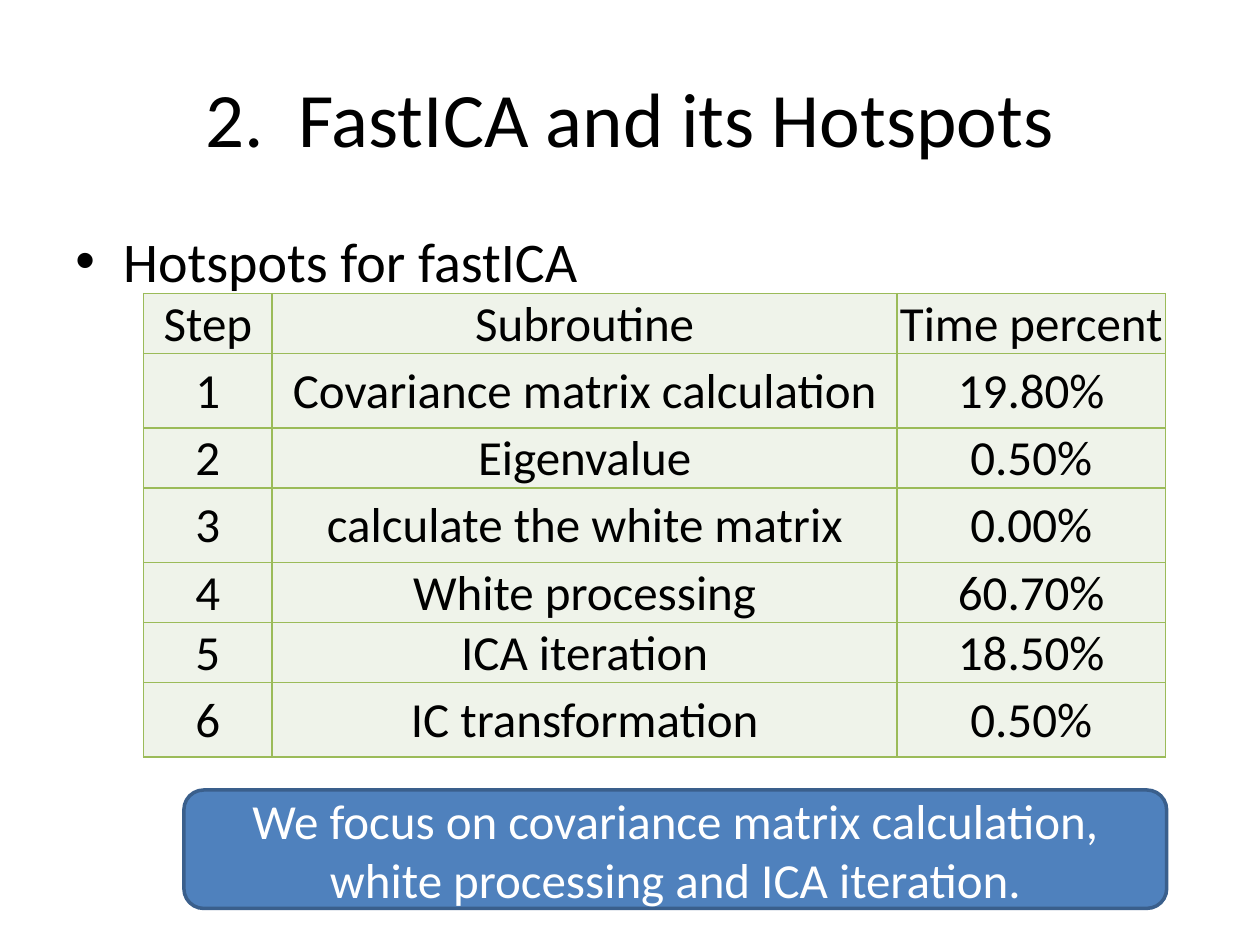
from lxml import etree
from pptx import Presentation
from pptx import util as u
from pptx.dml.color import RGBColor
from pptx.enum import shapes, text
from pptx.oxml.ns import qn

# Content
TITLE = "2.  FastICA and its Hotspots"
BULLET = "Hotspots for fastICA"
ROWS = [
    ("Step", "Subroutine", "Time percent"),
    ("1", "Covariance matrix calculation", "19.80%"),
    ("2", "Eigenvalue", "0.50%"),
    ("3", "calculate the white matrix", "0.00%"),
    ("4", "White processing", "60.70%"),
    ("5", "ICA iteration", "18.50%"),
    ("6", "IC transformation", "0.50%"),
]
FOCUS = "We focus on covariance matrix calculation, white processing and ICA iteration."

# Format
COLORS = {"text": "000000", "light": "FFFFFF", "box": "4F81BD",
          "box_line": "3A5F8C", "cell": "EFF3EA", "grid": "9BBB59"}
COL_WIDTHS = [1.02, 4.96, 2.13]
ROW_HEIGHTS = [0.4, 0.59, 0.2, 0.59, 0.4, 0.4, 0.59]
CELL_FORMAT = {"margin_left": u.Inches(0.01), "margin_right": u.Inches(0.01),
               "margin_top": u.Inches(0.01), "margin_bottom": 0,
               "vertical_anchor": text.MSO_ANCHOR.MIDDLE}
CENTER, LEFT = text.PP_ALIGN.CENTER, text.PP_ALIGN.LEFT
MIDDLE, TOP = text.MSO_ANCHOR.MIDDLE, text.MSO_ANCHOR.TOP


def rgb(name):
    return RGBColor.from_string(COLORS[name])


def box(*lengths):
    return [u.Inches(n) for n in lengths]


def write(tf, words, size, color="text", align=CENTER):
    p = tf.paragraphs[0]
    p.alignment = align
    r = p.add_run()
    r.text = words
    font = {"name": "Calibri", "size": u.Pt(size)}
    for key, value in font.items():
        setattr(r.font, key, value)
    r.font.color.rgb = rgb(color)
    return p


def fill(part, color):
    part.fill.solid()
    part.fill.fore_color.rgb = rgb(color)


def add_borders(cell):
    tcPr = cell._tc.get_or_add_tcPr()
    for i, side in enumerate(("lnL", "lnR", "lnT", "lnB")):
        ln = etree.Element(qn(f"a:{side}"), w=str(u.Pt(1)))
        solid = etree.SubElement(ln, qn("a:solidFill"))
        etree.SubElement(solid, qn("a:srgbClr"), val=COLORS["grid"])
        tcPr.insert(i, ln)


prs = Presentation()
prs.slide_width, prs.slide_height = box(10, 7.5)
s = prs.slides.add_slide(prs.slide_layouts[6])

# Title and bullet
for words, place, size, anchor, align in (
    (TITLE, (0.5, 0.3, 9, 1.25), 44, MIDDLE, CENTER),
    (BULLET, (0.5, 1.75, 9, 4.95), 32, TOP, LEFT),
):
    tf = s.shapes.add_textbox(*box(*place)).text_frame
    tf.word_wrap = True
    tf.vertical_anchor = anchor
    p = write(tf, words, size, align=align)

p.space_before = u.Pt(6.4)
pPr = p._p.get_or_add_pPr()
pPr.set("marL", str(u.Inches(0.38)))
pPr.set("indent", str(u.Inches(-0.38)))
etree.SubElement(pPr, qn("a:buFont"), typeface="Arial")
etree.SubElement(pPr, qn("a:buChar"), char="•")

# Focus box
sp = s.shapes.add_shape(shapes.MSO_SHAPE.ROUNDED_RECTANGLE, *box(1.46, 6.27, 7.8, 0.94))
sp.shadow.inherit = False
fill(sp, "box")
sp.line.color.rgb = rgb("box_line")
sp.line.width = u.Pt(2)
tf = sp.text_frame
tf.word_wrap = True
tf.vertical_anchor = MIDDLE
write(tf, FOCUS, 28, "light")

# Hotspot table
table = s.shapes.add_table(len(ROWS), len(COL_WIDTHS), *box(
    1.14, 2.33, sum(COL_WIDTHS), sum(ROW_HEIGHTS))).table
table.horz_banding = False
for col, width in zip(table.columns, COL_WIDTHS):
    col.width = u.Inches(width)
for row, height, values in zip(table.rows, ROW_HEIGHTS, ROWS):
    row.height = u.Inches(height)
    for cell, value in zip(row.cells, values):
        for key, setting in CELL_FORMAT.items():
            setattr(cell, key, setting)
        fill(cell, "cell")
        add_borders(cell)
        p = write(cell.text_frame, value, 28)
        p.runs[0].font.bold = False

prs.save("out.pptx")
